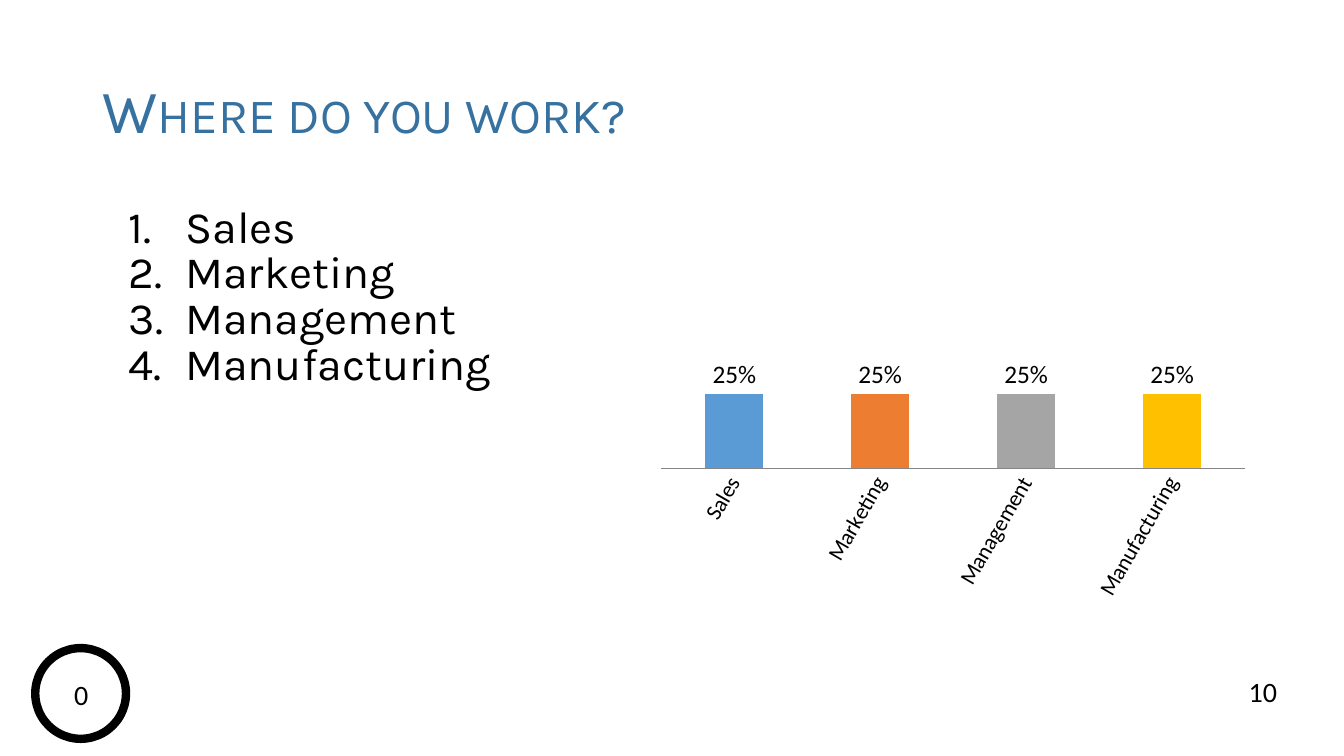
import pptx
import pptx.chart.data
import pptx.dml.color
import pptx.enum.chart
import pptx.enum.shapes
import pptx.enum.text
import pptx.oxml
import pptx.oxml.ns
import pptx.util
from pptx.util import Inches

COLORS = {
    "title": "3671A0",
    "text": "000000",
    "axis": "868686",
    "Sales": "5B9BD5",
    "Marketing": "ED7D31",
    "Management": "A5A5A5",
    "Manufacturing": "FFC000",
}
DEPARTMENTS = ["Sales", "Marketing", "Management", "Manufacturing"]


def color(name):
    return pptx.dml.color.RGBColor.from_string(COLORS[name])


def style_font(font, name, size, color_name="text"):
    font.name = name
    font.size = pptx.util.Pt(size)
    font.color.rgb = color(color_name)


def add_text_frame(slide, left, top, width, height):
    shape = slide.shapes.add_textbox(left, top, width, height)
    shape.text_frame.word_wrap = True
    return shape.text_frame


def add_run(paragraph, text, font_name, size, color_name="text"):
    run = paragraph.add_run()
    run.text = text
    style_font(run.font, font_name, size, color_name)
    return run


def add_title(slide, left, top, width, height):
    frame = add_text_frame(slide, left, top, width, height)
    frame.vertical_anchor = pptx.enum.text.MSO_ANCHOR.MIDDLE
    paragraph = frame.paragraphs[0]
    paragraph.line_spacing = 0.9
    run = add_run(paragraph, "Where do you work?", "Karla", 44, "title")
    run.font._element.set("cap", "small")


def add_answers(slide, left, top, width, height):
    frame = add_text_frame(slide, left, top, width, height)
    for index, department in enumerate(DEPARTMENTS):
        paragraph = frame.paragraphs[0] if index == 0 else frame.add_paragraph()
        paragraph.line_spacing = 0.85
        # Automatic numbering with a hanging indent
        properties = paragraph._p.get_or_add_pPr()
        properties.set("marL", str(Inches(0.56)))
        properties.set("indent", str(-Inches(0.56)))
        numbering = pptx.oxml.parse_xml(
            f'<a:buAutoNum {pptx.oxml.ns.nsdecls("a")} type="arabicPeriod"/>')
        properties.append(numbering)
        add_run(paragraph, department, "Karla", 32)


def add_results_chart(slide, left, top, width, height):
    data = pptx.chart.data.CategoryChartData(number_format="0%")
    data.categories = DEPARTMENTS
    data.add_series("Series 1", [0.25] * len(DEPARTMENTS))
    chart = slide.shapes.add_chart(
        pptx.enum.chart.XL_CHART_TYPE.COLUMN_CLUSTERED,
        left, top, width, height, data).chart
    chart.has_legend = False
    chart.has_title = False
    style_font(chart.font, "Calibri", 18)

    # Bars and their labels
    plot = chart.plots[0]
    plot.gap_width = 150
    plot.vary_by_categories = False
    for index, department in enumerate(DEPARTMENTS):
        fill = plot.series[0].points[index].format.fill
        fill.solid()
        fill.fore_color.rgb = color(department)
    plot.has_data_labels = True
    labels = plot.data_labels
    labels.show_value = True
    labels.number_format = "0%"
    labels.number_format_is_linked = False
    labels.position = pptx.enum.chart.XL_LABEL_POSITION.OUTSIDE_END
    style_font(labels.font, "Calibri", 18)

    # Axes: slanted category names, hidden values
    category_axis = chart.category_axis
    category_axis.major_tick_mark = pptx.enum.chart.XL_TICK_MARK.NONE
    category_axis.format.line.color.rgb = color("axis")
    category_axis.format.line.width = pptx.util.Pt(0.75)
    style_font(category_axis.tick_labels.font, "Calibri", 16)
    body = category_axis._element.find(pptx.oxml.ns.qn("c:txPr")).bodyPr
    body.set("rot", str(-60 * 60000))
    body.set("vert", "horz")
    value_axis = chart.value_axis
    value_axis.minimum_scale = 0
    value_axis.maximum_scale = 1
    value_axis.has_major_gridlines = False
    value_axis.visible = False

    # Fixed plot area, leaving room below for the names
    plot_area = chart._chartSpace.chart.plotArea
    for layout in plot_area.findall(pptx.oxml.ns.qn("c:layout")):
        plot_area.remove(layout)
    plot_area.insert(0, pptx.oxml.parse_xml(
        f'<c:layout {pptx.oxml.ns.nsdecls("c")}><c:manualLayout>'
        '<c:layoutTarget val="inner"/>'
        '<c:xMode val="edge"/><c:yMode val="edge"/>'
        '<c:x val="0.02"/><c:y val="0.01"/>'
        '<c:w val="0.97"/><c:h val="0.67"/>'
        '</c:manualLayout></c:layout>'))


def add_number(slide, text, left, top, width, height):
    paragraph = add_text_frame(slide, left, top, width, height).paragraphs[0]
    paragraph.alignment = pptx.enum.text.PP_ALIGN.CENTER
    add_run(paragraph, text, "Calibri", 20)


def add_response_counter(slide, left, top, size):
    circle = slide.shapes.add_shape(
        pptx.enum.shapes.MSO_SHAPE.OVAL, left, top, size, size)
    circle.shadow.inherit = False
    circle.fill.background()
    circle.line.color.rgb = color("text")
    circle.line.width = pptx.util.Pt(6)
    add_number(slide, "0", left + Inches(0.04), top + Inches(0.24),
               Inches(0.83), Inches(0.44))


def main():
    presentation = pptx.Presentation()
    presentation.slide_width = Inches(13.33)
    presentation.slide_height = Inches(7.5)
    slide = presentation.slides.add_slide(presentation.slide_layouts[6])
    add_results_chart(slide, Inches(6.44), Inches(1.64), Inches(5.97), Inches(4.42))
    add_title(slide, Inches(0.92), Inches(0.4), Inches(11.5), Inches(1.45))
    add_answers(slide, Inches(1.18), Inches(2), Inches(4.5), Inches(1.94))
    add_number(slide, "10", Inches(12.11), Inches(6.64), Inches(0.83), Inches(0.44))
    add_response_counter(slide, Inches(0.35), Inches(6.43), Inches(0.9))
    presentation.save("out.pptx")


if __name__ == "__main__":
    main()
